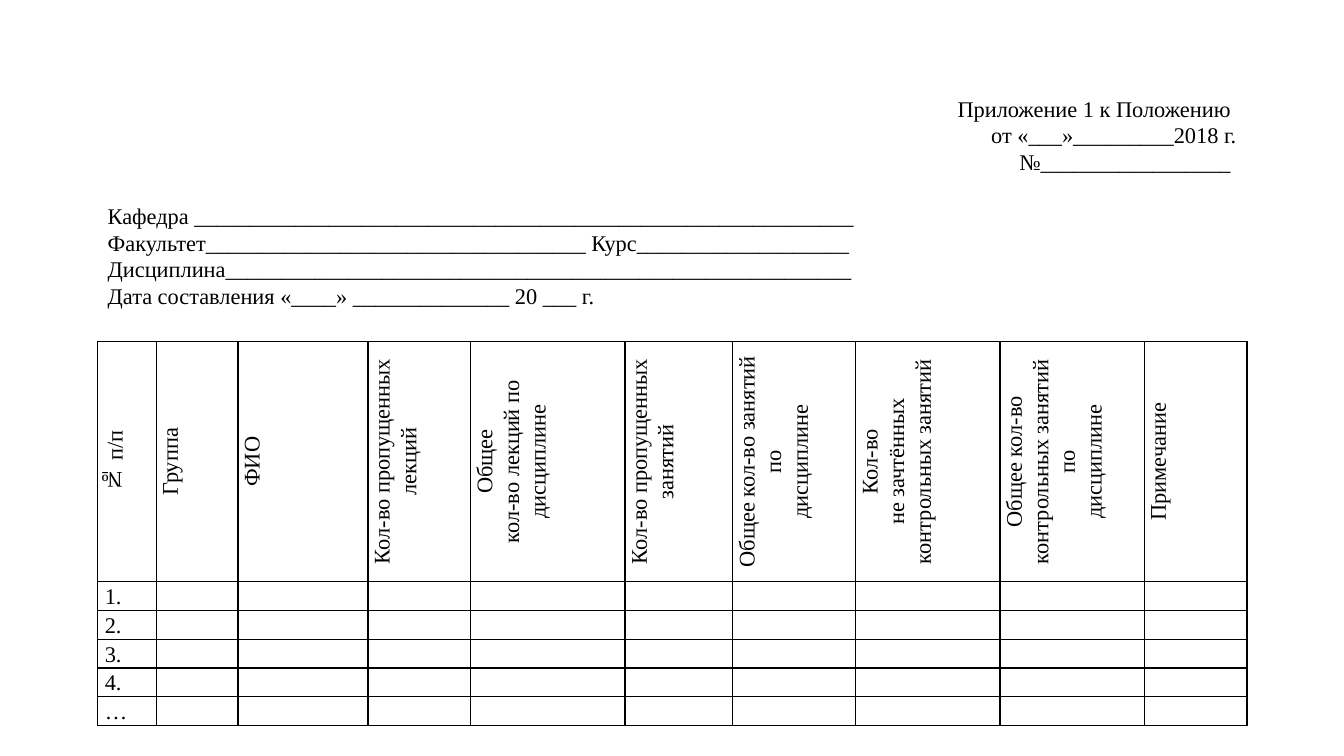
"""Build the attendance form: an appendix heading, blanks to fill in and a table."""
from lxml.etree import SubElement
from pptx import Presentation
from pptx.dml.color import RGBColor
from pptx.enum.text import MSO_ANCHOR as Anchor, MSO_AUTO_SIZE as AutoSize, PP_ALIGN as Align
from pptx.oxml.ns import qn
from pptx.util import Inches, Pt

SLIDE_WIDTH, SLIDE_HEIGHT = 13.33, 7.5
LEFT, WIDTH = 0.97, 11.39
FONT, SIZE, BLACK = "Times New Roman", 16, "000000"
COLUMN_WIDTHS = [0.58, 0.81, 1.29, 1.02, 1.53, 1.07, 1.22, 1.43, 1.43, 1.02]
HEADER_HEIGHT, ROW_HEIGHT = 2.38, 0.27
APPENDIX = [
    "Приложение 1 к Положению ",
    "от «___»_________2018 г.",
    "№" + "_" * 17 + " ",
]
FORM_FIELDS = [
    "Кафедра " + "_" * 59,
    "Факультет" + "_" * 34 + " Курс" + "_" * 19,
    "Дисциплина" + "_" * 56,
    "Дата составления «____» ______________ 20 ___ г.",
]
HEADERS = [
    ["№ п/п"],
    ["Группа"],
    ["ФИО"],
    ["Кол-во пропущенных", "лекций"],
    ["Общее", "кол-во лекций по", "дисциплине"],
    ["Кол-во пропущенных", "занятий"],
    ["Общее кол-во занятий по", "дисциплине"],
    ["Кол-во", "не зачтённых", "контрольных занятий"],
    ["Общее кол-во", "контрольных занятий по", "дисциплине"],
    ["Примечание"],
]
ROW_LABELS = ["1.", "2.", "3.", "4.", "…"]


def color(hex_string):
    """Turn a hex string into a colour."""
    return RGBColor.from_string(hex_string)


def write(paragraph, text, align=Align.LEFT, spacing=None, before=0):
    """Put formatted text into a paragraph."""
    paragraph.alignment = align
    paragraph.line_spacing = spacing
    paragraph.space_before = Pt(before)
    if not text:
        SubElement(paragraph._p, qn("a:endParaRPr"), sz=str(SIZE * 100))
        return
    run = paragraph.add_run()
    run.text = text
    run.font.name, run.font.size = FONT, Pt(SIZE)
    run.font.color.rgb = color(BLACK)


def next_paragraph(frame):
    """Return the empty first paragraph of a frame, or a new one."""
    first = frame.paragraphs[0]
    return frame.add_paragraph() if first.runs else first


def add_form_heading(slide):
    """Add the appendix reference and the fields to fill in."""
    box = slide.shapes.add_textbox(Inches(LEFT), Inches(0.89), Inches(WIDTH), Inches(2.26))
    frame = box.text_frame
    frame.word_wrap = True
    frame.auto_size = AutoSize.SHAPE_TO_FIT_TEXT
    for line in APPENDIX:
        write(next_paragraph(frame), line, align=Align.RIGHT)
    for index, line in enumerate(FORM_FIELDS):
        write(next_paragraph(frame), line, before=0 if index else 19)


def add_borders(cell):
    """Draw a thin black line on each side of a cell."""
    properties = cell._tc.get_or_add_tcPr()
    for side in ("lnL", "lnR", "lnT", "lnB"):
        line = SubElement(properties, qn(f"a:{side}"), w=str(Pt(1)))
        fill = SubElement(line, qn("a:solidFill"))
        SubElement(fill, qn("a:srgbClr"), val=BLACK)


def fill_cell(cell, lines, vertical=False):
    """Format a cell and write its lines, turned upwards if vertical."""
    add_borders(cell)
    cell.fill.background()
    cell.margin_left = cell.margin_right = Inches(0.07)
    cell.margin_top = cell.margin_bottom = 0
    cell.vertical_anchor = Anchor.MIDDLE
    if vertical:
        cell._tc.get_or_add_tcPr().set("vert", "vert270")
    for line in lines:
        write(next_paragraph(cell.text_frame), line, spacing=1.07,
              align=Align.CENTER if vertical else Align.LEFT)


def add_attendance_table(slide):
    """Add the table of missed classes."""
    row_count = len(ROW_LABELS) + 1
    height = HEADER_HEIGHT + ROW_HEIGHT * len(ROW_LABELS)
    table = slide.shapes.add_table(row_count, len(HEADERS), Inches(LEFT), Inches(3.39),
                                   Inches(WIDTH), Inches(height)).table
    table.first_row = table.horz_banding = False
    for column, width in zip(table.columns, COLUMN_WIDTHS):
        column.width = Inches(width)
    for index, row in enumerate(table.rows):
        row.height = Inches(ROW_HEIGHT if index else HEADER_HEIGHT)
    for index, lines in enumerate(HEADERS):
        fill_cell(table.cell(0, index), lines, vertical=True)
        for row, label in enumerate(ROW_LABELS, start=1):
            fill_cell(table.cell(row, index), ["" if index else label])


def main():
    """Build and save the slide."""
    presentation = Presentation()
    presentation.slide_width = Inches(SLIDE_WIDTH)
    presentation.slide_height = Inches(SLIDE_HEIGHT)
    slide = presentation.slides.add_slide(presentation.slide_layouts[6])
    add_form_heading(slide)
    add_attendance_table(slide)
    presentation.save("out.pptx")


if __name__ == "__main__":
    main()
